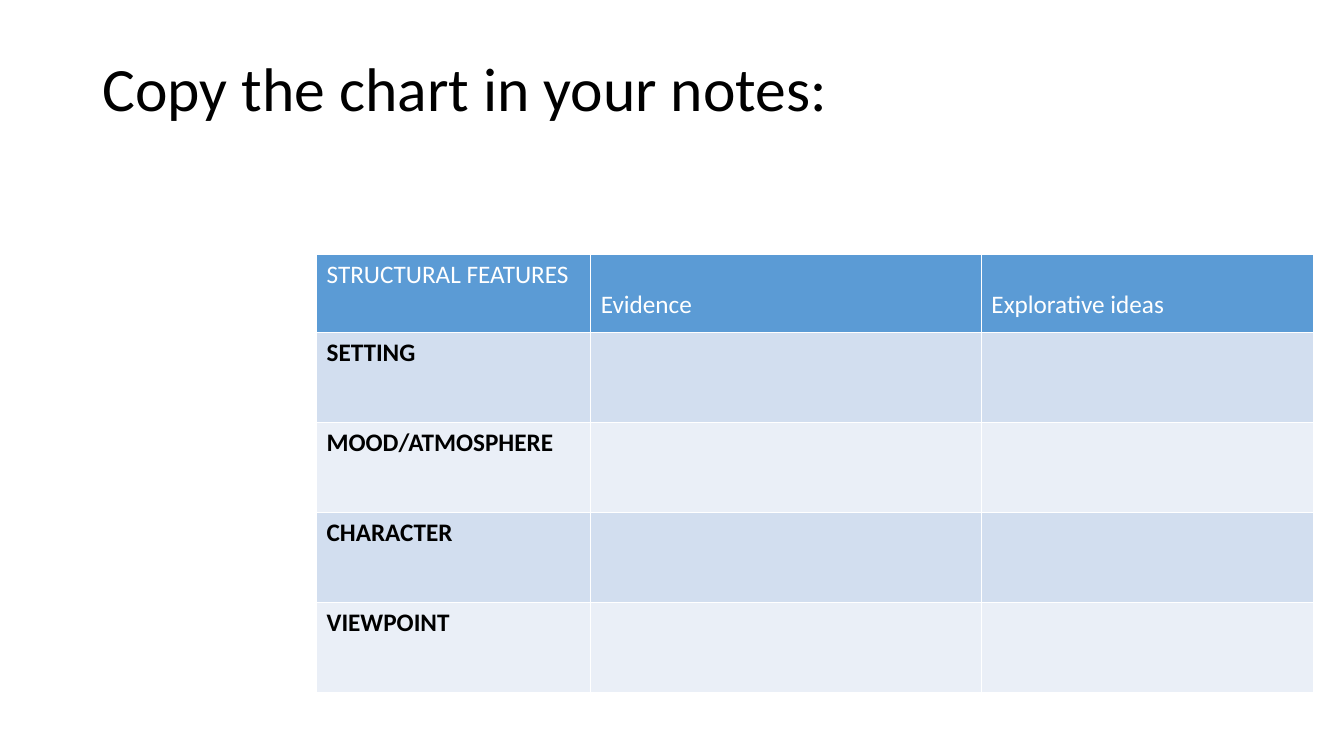
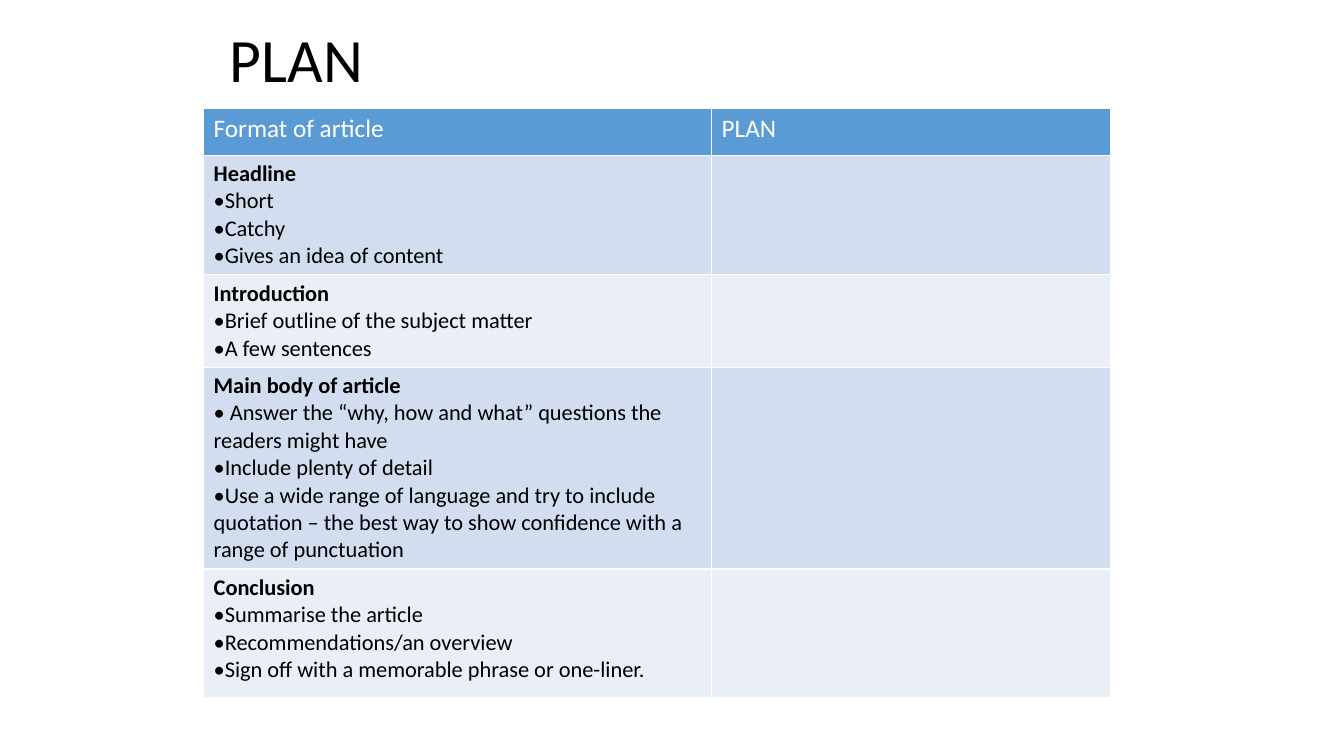
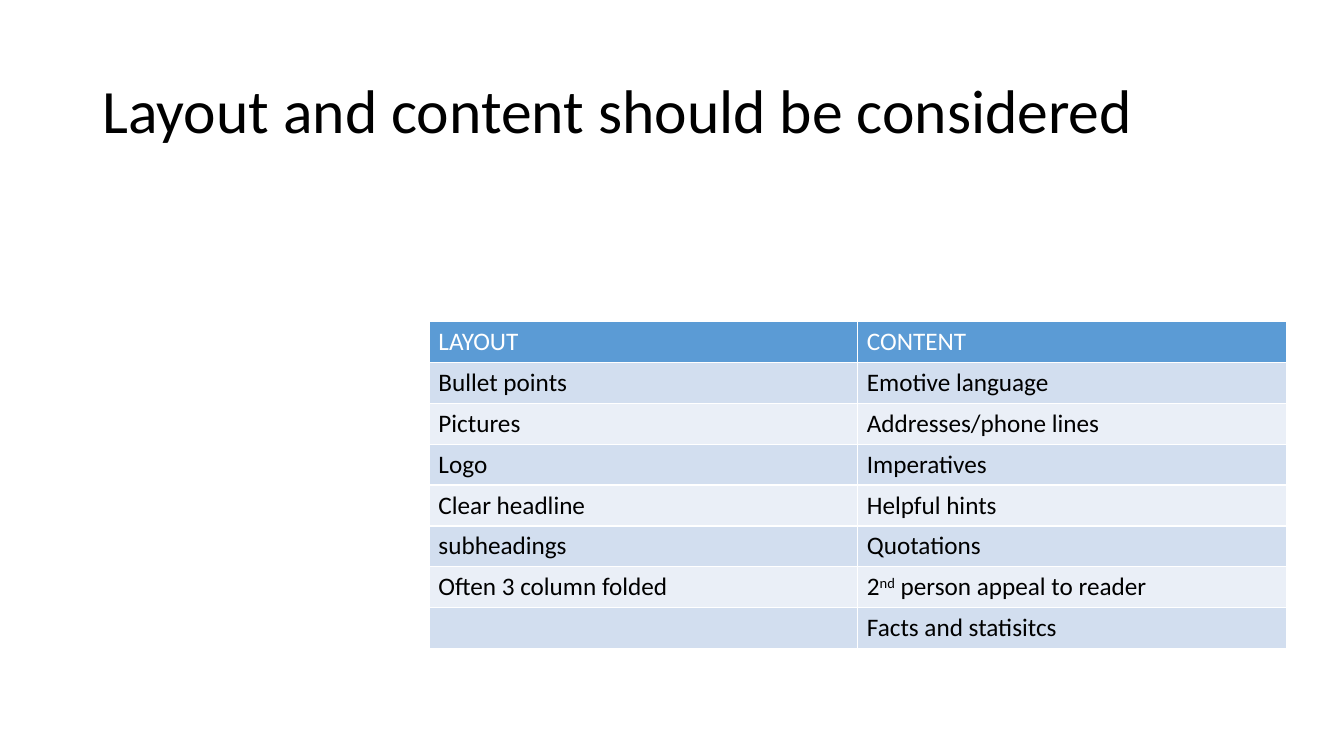
from lxml import etree
from pptx import Presentation
from pptx.dml.color import RGBColor
from pptx.enum.text import MSO_ANCHOR, PP_ALIGN
from pptx.oxml.ns import qn
from pptx.util import Inches, Pt

LEFT, MIDDLE = PP_ALIGN.LEFT, MSO_ANCHOR.MIDDLE
FONT = "Calibri"
BLACK, WHITE = "000000", "FFFFFF"
HEADER_FILL = "5B9BD5"
BAND_FILLS = ["EAEFF7", "D2DEEF"]  # even rows, odd rows
TITLE_ONLY = 5

deck = Presentation()
deck.slide_width, deck.slide_height = Inches(13.33), Inches(7.5)

# The grid: 100 columns by 100 rows
COLUMN, ROW = deck.slide_width / 100, deck.slide_height / 100


def set_font(font, size, color, bold=False):
    font.name, font.size, font.bold = FONT, Pt(size), bold
    font.color.rgb = RGBColor.from_string(color)


def add_bullet(para):
    properties = para._p.get_or_add_pPr()
    properties.set("marL", "0")
    properties.set("indent", "0")
    for bullet in (etree.Element(qn("a:buFont"), typeface=FONT),
                   etree.Element(qn("a:buChar"), char="•")):
        properties.insert_element_before(bullet, "a:tabLst", "a:defRPr", "a:extLst")


# Boxes are left, top, width, height; a cell's lines after the first are
# bulleted, and text between carets is superscript
pages = [
    {
        "title": "Copy the chart in your notes:",
        "title_box": (6.88, 5.33, 86.25, 13.6),
        "corner": (23.55, 33.68),
        "columns": [20.4, 29.07, 24.71],
        "rows": [10.3] + [11.9] * 4,
        "size": 18,
        "bold_labels": True,
        "header_drop": 0.3,
        "side_margin": 0.1,
        "cells": [
            ["STRUCTURAL FEATURES", "Evidence", "Explorative ideas"],
            ["SETTING"],
            ["MOOD/ATMOSPHERE"],
            ["CHARACTER"],
            ["VIEWPOINT"],
        ],
    },
    {
        "title": "PLAN",
        "title_box": (16.35, 0, 67.5, 16.67),
        "corner": (15.15, 14.33),
        "columns": [37.8, 29.7],
        "rows": [6.2, 15.73, 12.2, 26.67, 17],
        "size": 16,
        "bold_labels": True,
        "header_drop": 0,
        "side_margin": 0.1,
        "cells": [
            ["Format of article", "PLAN"],
            ["Headline\nShort\nCatchy\nGives an idea of content"],
            ["Introduction\nBrief outline of the subject matter\nA few sentences"],
            ["Main body of article\n"
             " Answer the “why, how and what” questions the readers might have\n"
             "Include plenty of detail\n"
             "Use a wide range of language and try to include quotation – "
             "the best way to show confidence with a range of punctuation"],
            ["Conclusion\nSummarise the article\nRecommendations/an overview\n"
             "Sign off with a memorable phrase or one-liner."],
        ],
    },
    {
        "title": "Layout and content should be considered",
        "title_box": (6.88, 5.33, 86.25, 19.33),
        "corner": (31.95, 42.53),
        "columns": [31.88] * 2,
        "rows": [5.4] * 8,
        "size": 18,
        "bold_labels": False,
        "header_drop": 0,
        "side_margin": 0.09,
        "cells": [
            ["LAYOUT", "CONTENT"],
            ["Bullet points", "Emotive language"],
            ["Pictures", "Addresses/phone lines"],
            ["Logo", "Imperatives"],
            ["Clear headline", "Helpful hints"],
            ["subheadings", "Quotations"],
            ["Often 3 column folded", "2^nd^ person appeal to reader"],
            ["", "Facts and statisitcs"],
        ],
    },
]

for page in pages:
    slide = deck.slides.add_slide(deck.slide_layouts[TITLE_ONLY])

    # Title
    title = slide.shapes.title
    left, top, width, height = page["title_box"]
    title.left, title.width = int(left * COLUMN), int(width * COLUMN)
    title.top, title.height = int(top * ROW), int(height * ROW)
    title.text_frame.text = page["title"]
    title.text_frame.vertical_anchor = MIDDLE
    para = title.text_frame.paragraphs[0]
    para.alignment, para.line_spacing = LEFT, 0.9
    set_font(para.font, 44, BLACK)

    # Table grid
    left, top = page["corner"]
    columns, rows = page["columns"], page["rows"]
    table = slide.shapes.add_table(
        len(rows), len(columns), int(left * COLUMN), int(top * ROW),
        int(sum(columns) * COLUMN), int(sum(rows) * ROW)).table
    for column, width in zip(table.columns, columns):
        column.width = int(width * COLUMN)
    for row, height in zip(table.rows, rows):
        row.height = int(height * ROW)

    # Cell fills and margins
    for r, row in enumerate(table.rows):
        for cell in row.cells:
            cell.fill.solid()
            fill = BAND_FILLS[r % 2] if r else HEADER_FILL
            cell.fill.fore_color.rgb = RGBColor.from_string(fill)
            cell.margin_left = cell.margin_right = Inches(page["side_margin"])

    # Cell text
    for r, texts in enumerate(page["cells"]):
        for c, text in enumerate(texts):
            cell = table.cell(r, c)
            if r == 0 and c > 0:
                cell.margin_top = Inches(0.05 + page["header_drop"])
            for n, line in enumerate(text.split("\n")):
                frame = cell.text_frame
                para = frame.add_paragraph() if n else frame.paragraphs[0]
                bold = page["bold_labels"] and r > 0 and n == 0
                set_font(para.font, page["size"] if r else 18,
                         BLACK if r else WHITE, bold)
                if n:
                    add_bullet(para)
                for s, part in enumerate(line.split("^")):
                    span = para.add_run()
                    span.text = part
                    if s % 2:
                        span._r.get_or_add_rPr().set("baseline", "30000")

deck.save("out.pptx")
